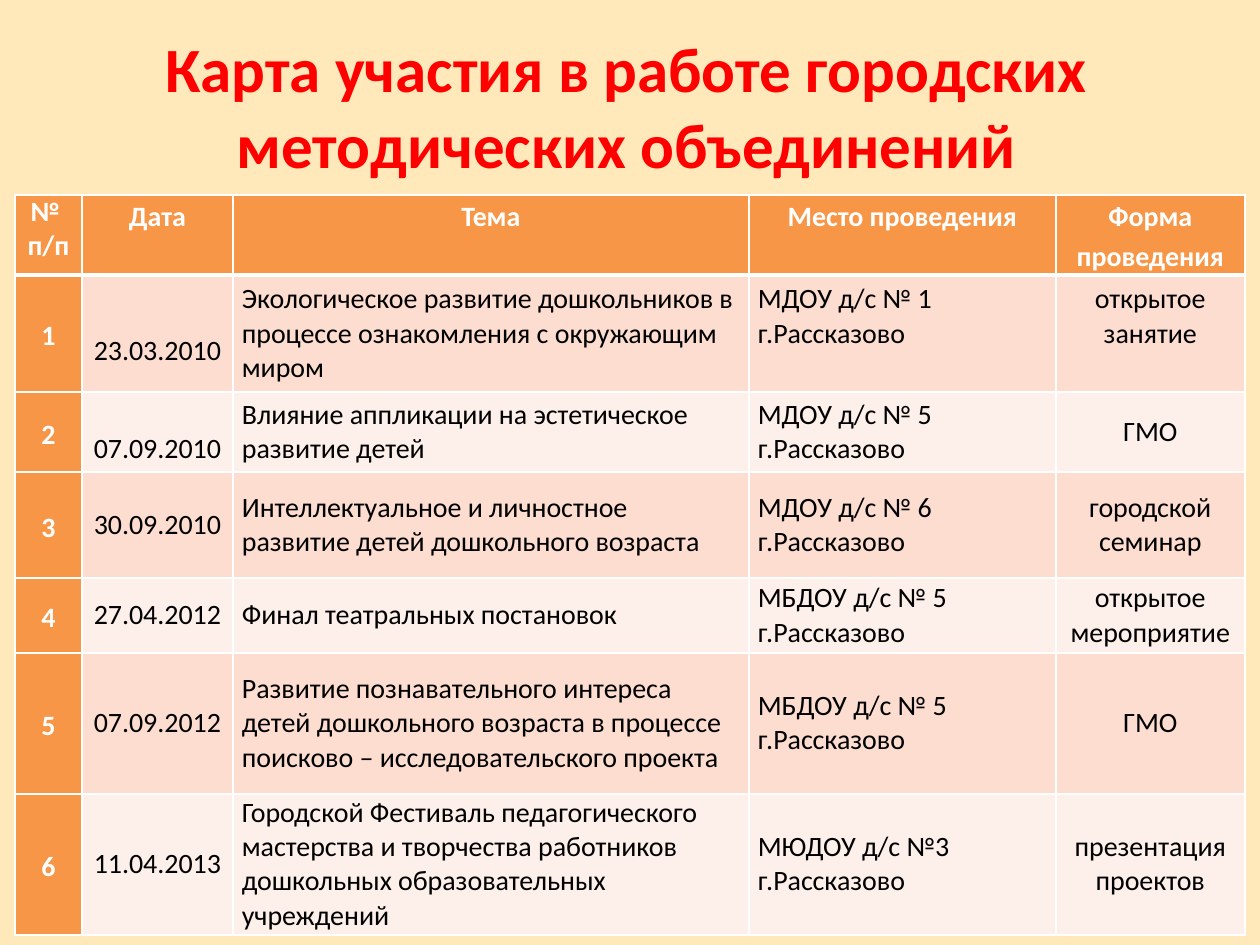
from lxml.etree import SubElement
from pptx import Presentation
from pptx.dml.color import RGBColor
from pptx.enum.text import MSO_ANCHOR, MSO_AUTO_SIZE, PP_ALIGN
from pptx.oxml.ns import qn
from pptx.util import Emu, Pt

PX = 914400 // 126
FONT = "Calibri"
COLORS = {
    "background": "FFE8BA", "title": "FF0000", "accent": "F79646",
    "odd": "FCDDCF", "even": "FDEFE9", "white": "FFFFFF", "text": "000000",
}


def rgb(name):
    return RGBColor.from_string(COLORS[name])


def add_borders(cell, top, bottom):
    tcPr = cell._tc.get_or_add_tcPr()
    for side, width in (("L", 1), ("R", 1), ("T", top), ("B", bottom)):
        ln = SubElement(tcPr, qn(f"a:ln{side}"), w=str(Pt(width)))
        fill = SubElement(ln, qn("a:solidFill"))
        SubElement(fill, qn("a:srgbClr"), val=COLORS["white"])


prs = Presentation()
prs.slide_width, prs.slide_height = Emu(1260 * PX), Emu(945 * PX)
s = prs.slides.add_slide(prs.slide_layouts[5])
s.background.fill.solid()
s.background.fill.fore_color.rgb = rgb("background")

# Title
sp = s.shapes.title
sp.left, sp.top, sp.width, sp.height = [Emu(v * PX) for v in (42, 16, 1183, 179)]
tf = sp.text_frame
tf.text = "Карта участия в работе городских \nметодических объединений "
tf.word_wrap = True
tf.auto_size = MSO_AUTO_SIZE.NONE
tf.vertical_anchor = MSO_ANCHOR.MIDDLE
for p in tf.paragraphs:
    p.alignment = PP_ALIGN.CENTER
    p.font.name, p.font.size, p.font.bold = FONT, Pt(36), True
    p.font.color.rgb = rgb("title")

# Table contents
rows = [
    ("№ \nп/п", "Дата", "Тема", "Место проведения", "Форма проведения"),
    ("1", " 23.03.2010",
     "Экологическое развитие дошкольников в процессе ознакомления с окружающим миром",
     "МДОУ д/с № 1\nг.Рассказово", "открытое занятие"),
    ("2", " 07.09.2010", "Влияние аппликации на эстетическое развитие детей",
     "МДОУ д/с № 5\nг.Рассказово", "ГМО"),
    ("3", "30.09.2010",
     "Интеллектуальное и личностное развитие детей дошкольного возраста",
     "МДОУ д/с № 6\nг.Рассказово", "городской семинар"),
    ("4", "27.04.2012", "Финал театральных постановок",
     "МБДОУ д/с № 5\nг.Рассказово", "открытое мероприятие"),
    ("5", "07.09.2012",
     "Развитие познавательного интереса детей дошкольного возраста в процессе "
     "поисково – исследовательского проекта",
     "МБДОУ д/с № 5\nг.Рассказово", "ГМО"),
    ("6", "11.04.2013",
     "Городской Фестиваль педагогического мастерства и творчества работников "
     "дошкольных образовательных учреждений",
     "МЮДОУ д/с №3\nг.Рассказово", "презентация проектов"),
]
col_widths = (67, 151, 516, 307, 189)
row_heights = (80, 117, 80, 106, 75, 141, 141)

# Table grid
table = s.shapes.add_table(
    len(rows), len(col_widths), Emu(15 * PX), Emu(195 * PX),
    Emu(sum(col_widths) * PX), Emu(sum(row_heights) * PX)).table
for col, width in zip(table.columns, col_widths):
    col.width = Emu(width * PX)
for row, height in zip(table.rows, row_heights):
    row.height = Emu(height * PX)

# Cells: accent header row and number column, banded body
for i, row in enumerate(rows):
    for j, text in enumerate(row):
        cell = table.cell(i, j)
        accent = i == 0 or j == 0
        add_borders(cell, 3 if i == 1 else 1, 3 if i == 0 else 1)
        cell.fill.solid()
        cell.fill.fore_color.rgb = rgb("accent" if accent else "odd" if i % 2 else "even")
        cell.vertical_anchor = MSO_ANCHOR.TOP if i == 0 else MSO_ANCHOR.MIDDLE
        cell.margin_left = cell.margin_right = Emu(9 * PX)
        cell.margin_top = cell.margin_bottom = 0
        # The first entry's place and form sit half a line higher
        if i == 1 and j >= 3:
            cell.margin_bottom = Emu(34 * PX)
        cell.text = text
        for p in cell.text_frame.paragraphs:
            centered = i == 0 or j not in (2, 3)
            p.alignment = PP_ALIGN.CENTER if centered else PP_ALIGN.LEFT
            if accent and (i, j) != (0, 0):
                p.line_spacing = 1.15
            p.font.name, p.font.size, p.font.bold = FONT, Pt(16), accent
            p.font.color.rgb = rgb("white" if accent else "text")

prs.save("out.pptx")
